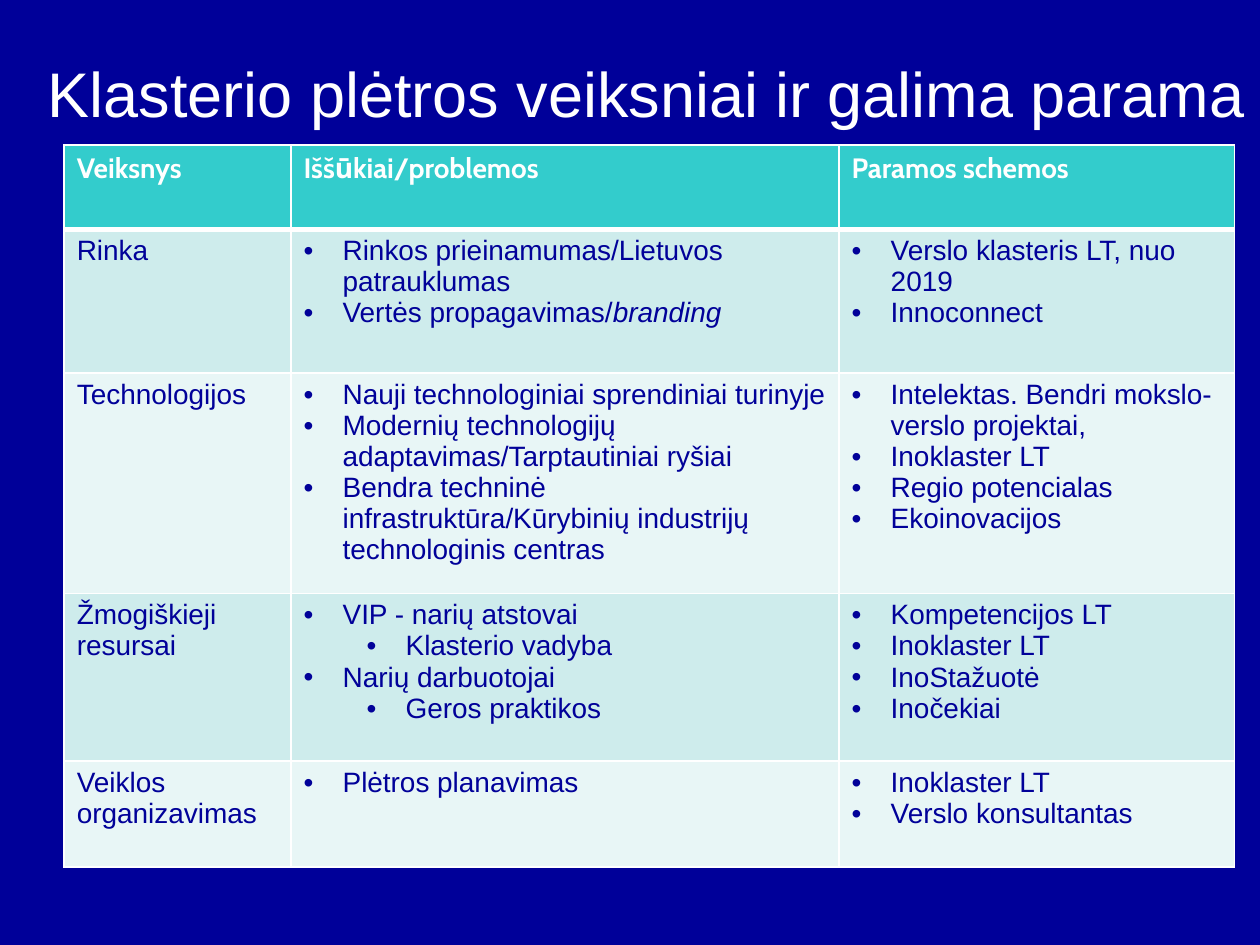
"""Build the slide on cluster development factors and available support."""
from dataclasses import dataclass

from lxml.etree import SubElement
from pptx import Presentation
from pptx.dml.color import RGBColor
from pptx.enum.text import MSO_ANCHOR
from pptx.oxml.ns import qn
from pptx.util import Inches, Pt


@dataclass(frozen=True)
class Theme:
    navy: str = "000099"
    ink: str = "010199"
    white: str = "FFFFFF"
    header: str = "33CCCC"
    bands: tuple = ("E8F6F6", "CEECEC")
    body_font: str = "Arial"
    header_font: str = "Cabin"
    title_size: int = 36
    table_size: int = 16


T = Theme()


def write(p, text, size=T.table_size, color=T.ink, font=T.body_font, bold=False, level=None):
    if level is not None:
        p.level = level
        pPr = p._p.get_or_add_pPr()
        pPr.set("marL", str(Inches(0.31 + 0.5 * level)))
        pPr.set("indent", str(Inches(-0.31)))
        SubElement(pPr, qn("a:buFont"), typeface="Arial")
        SubElement(pPr, qn("a:buChar"), char="•")
    plain, _, italic = text.partition("*")
    for part, slanted in ((plain, False), (italic, True)):
        if part:
            r = p.add_run()
            r.text = part
            r.font.size = Pt(size)
            r.font.name = font
            r.font.bold = bold
            r.font.italic = slanted
            r.font.color.rgb = RGBColor.from_string(color)


def add_borders(cell, widths):
    tcPr = cell._tc.get_or_add_tcPr()
    for side, width in zip("LRTB", widths):
        ln = SubElement(tcPr, qn(f"a:ln{side}"), w=str(Pt(width)))
        fill = SubElement(ln, qn("a:solidFill"))
        SubElement(fill, qn("a:srgbClr"), val=T.white)


headers = ["Veiksnys", "Iššūkiai/problemos", "Paramos schemos"]
factors = [
    ("Rinka",
     [(0, "Rinkos prieinamumas/Lietuvos patrauklumas"),
      (0, "Vertės propagavimas/*branding")],
     ["Verslo klasteris LT, nuo 2019", "Innoconnect"]),
    ("Technologijos",
     [(0, "Nauji technologiniai sprendiniai turinyje"),
      (0, "Modernių technologijų adaptavimas/Tarptautiniai ryšiai"),
      (0, "Bendra techninė infrastruktūra/Kūrybinių industrijų technologinis centras")],
     ["Intelektas. Bendri mokslo-verslo projektai,", "Inoklaster LT",
      "Regio potencialas", "Ekoinovacijos"]),
    ("Žmogiškieji resursai",
     [(0, "VIP - narių atstovai"), (1, "Klasterio vadyba"),
      (0, "Narių darbuotojai"), (1, "Geros praktikos")],
     ["Kompetencijos LT", "Inoklaster LT", "InoStažuotė", "Inočekiai"]),
    ("Veiklos organizavimas",
     [(0, "Plėtros planavimas")],
     ["Inoklaster LT", "Verslo konsultantas"]),
]

prs = Presentation()
prs.slide_width, prs.slide_height = Inches(10), Inches(7.5)
s = prs.slides.add_slide(prs.slide_layouts[6])
s.background.fill.solid()
s.background.fill.fore_color.rgb = RGBColor.from_string(T.navy)

tf = s.shapes.add_textbox(Inches(0.28), Inches(0.32), Inches(9.72), Inches(0.83)).text_frame
tf.word_wrap = True
tf.margin_right = 0
tf.vertical_anchor = MSO_ANCHOR.MIDDLE
write(tf.paragraphs[0], "Klasterio plėtros veiksniai ir galima parama",
      size=T.title_size, color=T.white)

col_widths = [1.8, 4.35, 3.14]
row_heights = [0.67, 1.14, 1.75, 1.33, 0.84]
table = s.shapes.add_table(len(row_heights), len(col_widths), Inches(0.51), Inches(1.15),
                           Inches(sum(col_widths)), Inches(sum(row_heights))).table
for col, width in zip(table.columns, col_widths):
    col.width = Inches(width)
for row, height in zip(table.rows, row_heights):
    row.height = Inches(height)

rows = [[[(None, h)] for h in headers]]
for factor, problems, schemes in factors:
    rows.append([[(None, factor)], problems, [(0, scheme) for scheme in schemes]])

for i, row in enumerate(rows):
    style = {} if i else {"color": T.white, "font": T.header_font, "bold": True}
    for j, lines in enumerate(row):
        cell = table.cell(i, j)
        add_borders(cell, (1, 1, 3 if i == 1 else 1, 3 if i == 0 else 1))
        cell.fill.solid()
        cell.fill.fore_color.rgb = RGBColor.from_string(T.bands[i % 2] if i else T.header)
        tf = cell.text_frame
        for n, (level, text) in enumerate(lines):
            p = tf.add_paragraph() if n else tf.paragraphs[0]
            write(p, text, level=level, **style)

prs.save("out.pptx")
